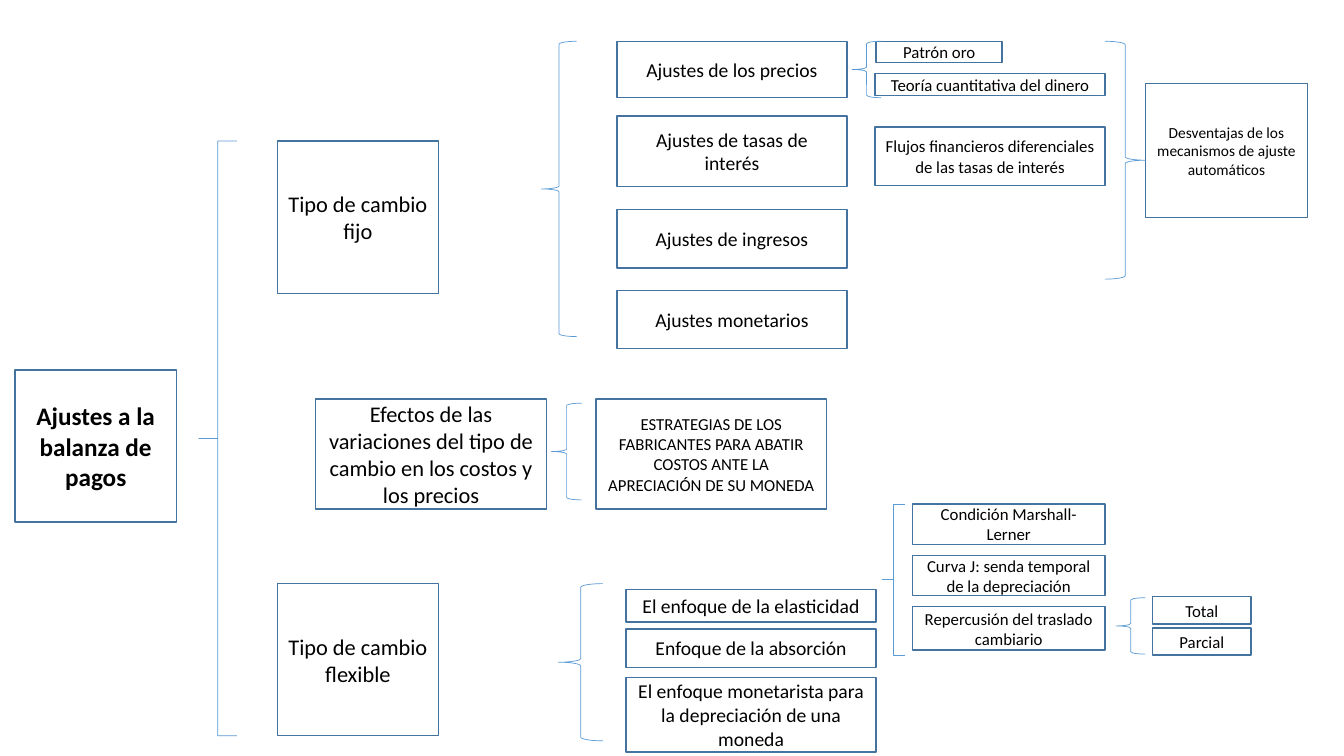
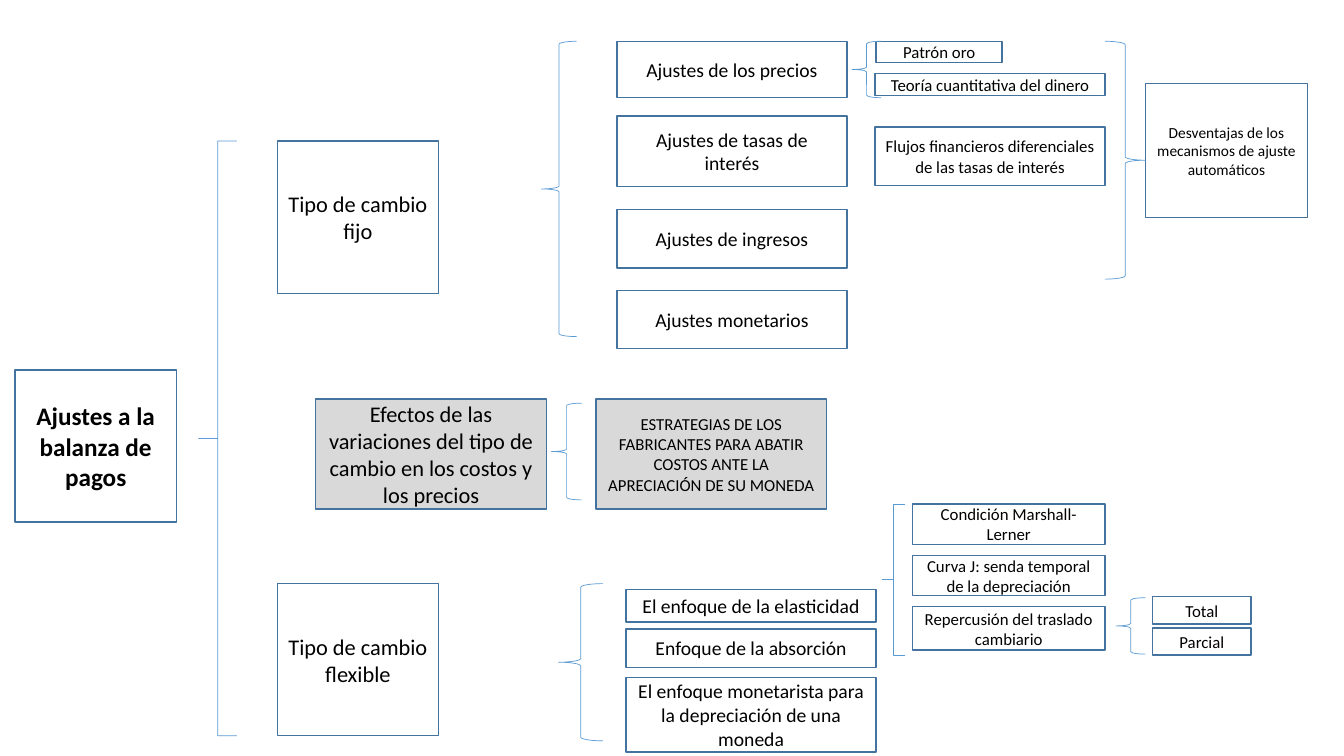
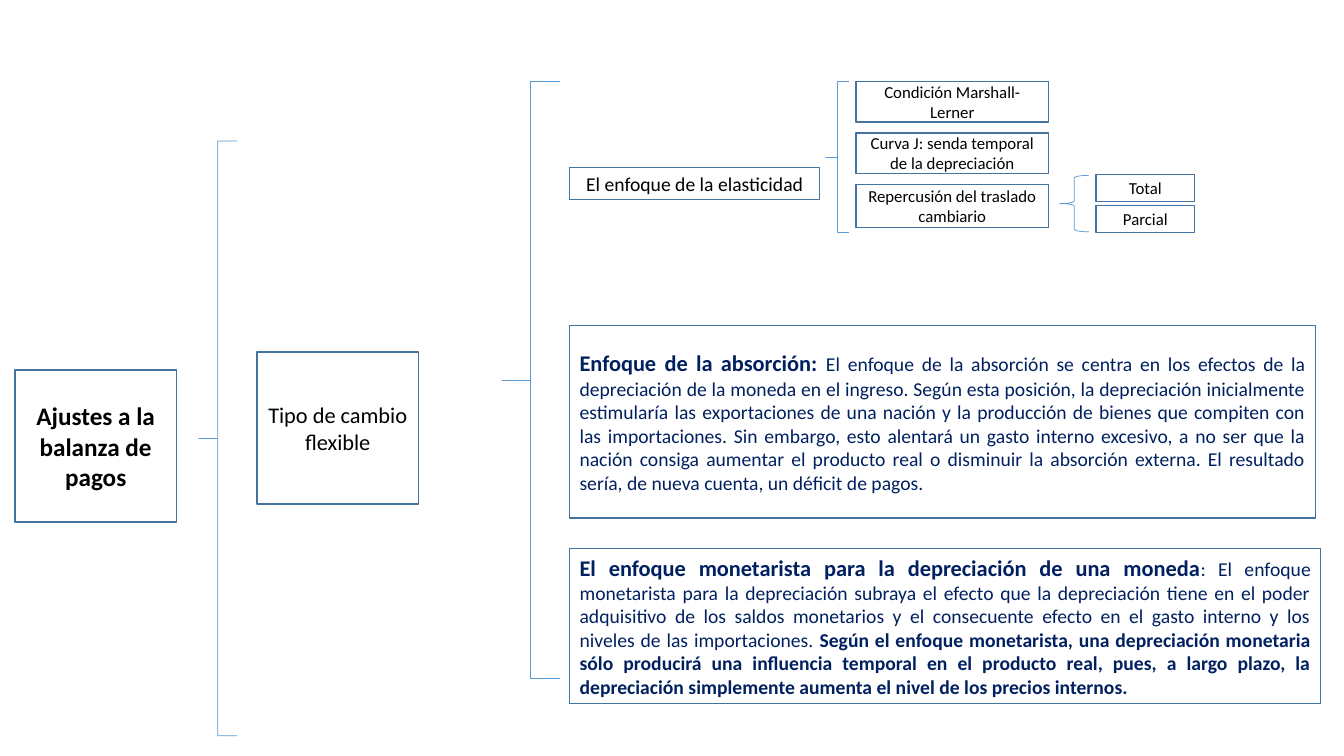
from pptx import Presentation
from pptx import util as u
from pptx.dml.color import RGBColor
from pptx.enum import shapes, text

WHITE = RGBColor(0xFF, 0xFF, 0xFF)
BLACK = RGBColor(0x00, 0x00, 0x00)
NAVY = RGBColor(0x00, 0x20, 0x60)
GREY = RGBColor(0xD9, 0xD9, 0xD9)
BOX_LINE = RGBColor(0x43, 0x73, 0x9E)
BRACE_LINE = RGBColor(0x5B, 0x9B, 0xD5)
FONT = "Calibri"

# Columns of the diagram: left, width, text size
COLUMNS = {
    "root": (0.15, 1.6, 18),
    "regime": (2.75, 1.6, 16),
    "effects": (3.13, 2.29, 16),
    "strategy": (5.91, 2.29, 12),
    "adjustment": (6.12, 2.28, 14),
    "approach": (6.21, 2.48, 14),
    "gold": (8.69, 1.25, 12),
    "theory": (8.68, 2.28, 12),
    "condition": (9.05, 1.91, 12),
    "drawback": (11.36, 1.61, 11),
    "transfer": (11.43, 0.98, 12),
}

# Boxes: column, top, height, text
ROOT = [("root", 3.67, 1.51, "Ajustes a la balanza de pagos")]
FIXED = [
    ("regime", 1.4, 1.51, "Tipo de cambio fijo"),
    ("adjustment", 0.41, 0.56, "Ajustes de los precios"),
    ("adjustment", 1.15, 0.7, "Ajustes de tasas de interés"),
    ("adjustment", 2.08, 0.58, "Ajustes de ingresos"),
    ("adjustment", 2.88, 0.58, "Ajustes monetarios"),
    ("gold", 0.41, 0.21, "Patrón oro"),
    ("theory", 0.73, 0.22, "Teoría cuantitativa del dinero"),
    ("theory", 1.26, 0.58, "Flujos financieros diferenciales de las tasas de interés"),
    ("drawback", 0.83, 1.33, "Desventajas de los mecanismos de ajuste automáticos"),
]
EFFECTS = [
    ("effects", 3.96, 1.09,
     "Efectos de las variaciones del tipo de cambio en los costos y los precios"),
    ("strategy", 3.96, 1.09,
     "ESTRATEGIAS DE LOS FABRICANTES PARA ABATIR COSTOS ANTE LA APRECIACIÓN DE SU MONEDA"),
]
FLEXIBLE = [("regime", 5.79, 1.51, "Tipo de cambio flexible")]
OTHER_APPROACHES = [
    ("approach", 6.24, 0.38, "Enfoque de la absorción"),
    ("approach", 6.72, 0.74, "El enfoque monetarista para la depreciación de una moneda"),
]
ELASTICITY = [
    ("approach", 5.85, 0.32, "El enfoque de la elasticidad"),
    ("condition", 5, 0.4, "Condición Marshall-Lerner"),
    ("condition", 5.51, 0.4, "Curva J: senda temporal de la depreciación"),
    ("condition", 6.02, 0.43, "Repercusión del traslado cambiario"),
    ("transfer", 5.92, 0.27, "Total"),
    ("transfer", 6.23, 0.27, "Parcial"),
]

# Braces: kind, left, top, width, height
ROOT_BRACES = [("square", 1.97, 1.4, 0.38, 5.9)]
OVERVIEW_BRACES = [
    ("right", 10.96, 0.41, 0.4, 2.36),
    ("left", 5.37, 0.41, 0.35, 2.93),
    ("left", 8.45, 0.41, 0.29, 0.56),
    ("left", 5.47, 4, 0.3, 0.96),
    ("left", 5.54, 5.79, 0.44, 1.56),
]
ELASTICITY_BRACES = [
    ("square", 8.75, 5, 0.23, 1.5),
    ("left", 11.07, 5.93, 0.29, 0.56),
]
DETAIL_BRACES = [("square", 4.98, 0.81, 0.57, 5.92)]

# Explanations: left, top, width, height, runs of (text, size, bold)
EXPLANATIONS = [
    (5.65, 3.23, 7.4, 1.91, [
        ("Enfoque de la absorción: ", 16, True),
        ("El enfoque de la absorción se centra en los efectos de la depreciación de la "
         "moneda en el ingreso. Según esta posición, la depreciación inicialmente "
         "estimularía las exportaciones de una nación y la producción de bienes que "
         "compiten con las importaciones. Sin embargo, esto alentará un gasto interno "
         "excesivo, a no ser que la nación consiga aumentar el producto real o disminuir "
         "la absorción externa. El resultado sería, de nueva cuenta, un déficit de pagos.",
         14, False),
    ]),
    (5.65, 5.44, 7.45, 1.54, [
        ("El enfoque monetarista para la depreciación de una moneda", 16, True),
        (": El enfoque monetarista para la depreciación subraya el efecto que la "
         "depreciación tiene en el poder adquisitivo de los saldos monetarios y el "
         "consecuente efecto en el gasto interno y los niveles de las importaciones. ",
         14, False),
        ("Según el enfoque monetarista, una depreciación monetaria sólo producirá una "
         "influencia temporal en el producto real, pues, a largo plazo, la depreciación "
         "simplemente aumenta el nivel de los precios internos.", 14, True),
    ]),
]


def add_preset(slide, kind, area, line_color, line_width):
    shape = slide.shapes.add_shape(kind, *map(u.Inches, area))
    shape.shadow.inherit = False
    shape.line.color.rgb = line_color
    shape.line.width = u.Pt(line_width)
    return shape


def add_box(slide, area, color, fill=WHITE, align=text.PP_ALIGN.CENTER):
    """Draw an outlined box and return its paragraph."""
    shape = add_preset(slide, shapes.MSO_SHAPE.RECTANGLE, area, BOX_LINE, 1)
    shape.fill.solid()
    shape.fill.fore_color.rgb = fill
    shape.text_frame.word_wrap = True
    shape.text_frame.vertical_anchor = text.MSO_ANCHOR.MIDDLE
    paragraph = shape.text_frame.paragraphs[0]
    paragraph.alignment = align
    paragraph.font.name = FONT
    paragraph.font.color.rgb = color
    return paragraph


def add_boxes(slide, boxes, fill=WHITE, shift=(0, 0)):
    for column, top, height, label in boxes:
        left, width, size = COLUMNS[column]
        area = (left + shift[0], top + shift[1], width, height)
        paragraph = add_box(slide, area, BLACK, fill)
        paragraph.font.size = u.Pt(size)
        paragraph.font.bold = column == "root"
        paragraph.add_run().text = label


def add_braces(slide, braces, shift=(0, 0)):
    for kind, left, top, width, height in braces:
        preset = (shapes.MSO_SHAPE.RIGHT_BRACE if kind == "right"
                  else shapes.MSO_SHAPE.LEFT_BRACE)
        area = (left + shift[0], top + shift[1], width, height)
        brace = add_preset(slide, preset, area, BRACE_LINE, 0.5)
        brace.fill.background()
        if kind == "square":
            brace.adjustments[0] = 0


def add_explanation(slide, left, top, width, height, runs):
    paragraph = add_box(slide, (left, top, width, height), NAVY,
                        align=text.PP_ALIGN.JUSTIFY)
    for words, size, bold in runs:
        run = paragraph.add_run()
        run.text = words
        run.font.size = u.Pt(size)
        run.font.bold = bold


def add_slide(presentation):
    """Add a slide with the root of the diagram."""
    slide = presentation.slides.add_slide(presentation.slide_layouts[6])
    add_boxes(slide, ROOT)
    add_braces(slide, ROOT_BRACES)
    return slide


def add_overview(presentation, effects_fill):
    slide = add_slide(presentation)
    add_boxes(slide, FIXED + FLEXIBLE + OTHER_APPROACHES + ELASTICITY)
    add_boxes(slide, EFFECTS, effects_fill)
    add_braces(slide, OVERVIEW_BRACES + ELASTICITY_BRACES)


def add_detail(presentation):
    slide = add_slide(presentation)
    add_boxes(slide, FLEXIBLE, shift=(-0.2, -2.3))
    elasticity_shift = (-0.56, -4.19)
    add_boxes(slide, ELASTICITY, shift=elasticity_shift)
    add_braces(slide, ELASTICITY_BRACES, elasticity_shift)
    add_braces(slide, DETAIL_BRACES)
    for explanation in EXPLANATIONS:
        add_explanation(slide, *explanation)


def main():
    presentation = Presentation()
    presentation.slide_width = u.Inches(13.33)
    presentation.slide_height = u.Inches(7.5)
    for effects_fill in (WHITE, GREY):
        add_overview(presentation, effects_fill)
    add_detail(presentation)
    presentation.save("out.pptx")


if __name__ == "__main__":
    main()
